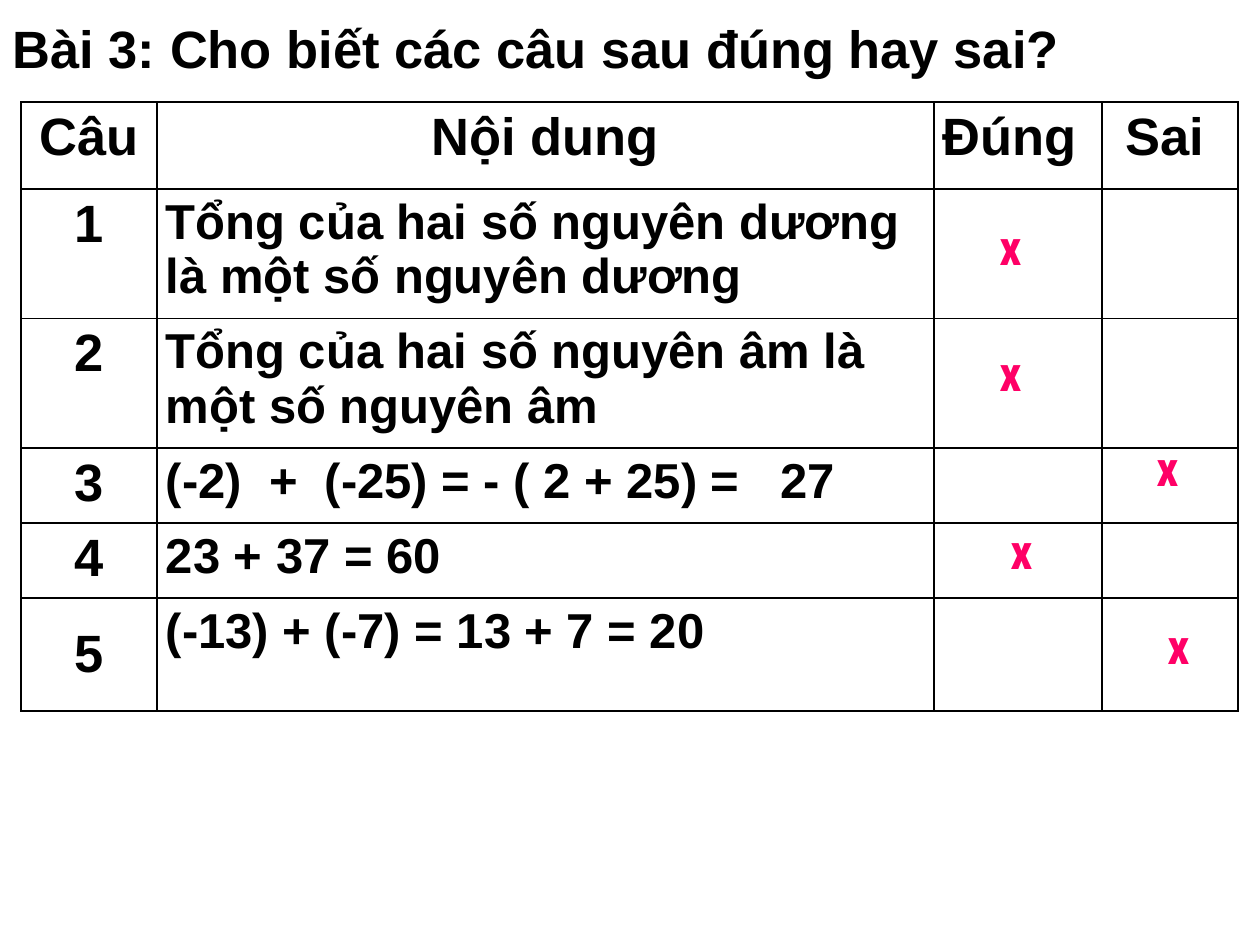
from lxml import etree
from pptx import Presentation
from pptx.dml.color import RGBColor
from pptx.enum.text import MSO_ANCHOR, MSO_AUTO_SIZE, PP_ALIGN
from pptx.oxml.ns import qn
from pptx.util import Pt

LEFT, MID = PP_ALIGN.LEFT, PP_ALIGN.CENTER
TOP, CENTER = MSO_ANCHOR.TOP, MSO_ANCHOR.MIDDLE
GROW = MSO_AUTO_SIZE.SHAPE_TO_FIT_TEXT
SCALE = 914400 / 126
COLORS = {"ink": "000000", "mark": "FF0066"}
COLS = [136, 777, 168, 136]
ROWS = [87, 126, 121, 74, 74, 113]
HEADS = ["Câu", "Nội dung", "Đúng", " Sai"]
ITEMS = [
    "Tổng của hai số nguyên dương là một số nguyên dương",
    "Tổng của hai số nguyên âm là một số nguyên âm",
    "(-2)  +  (-25) = - ( 2 + 25) =   27",
    "23 + 37 = 60",
    "(-13) + (-7) = 13 + 7 = 20",
]
MARKS = [(987, 210), (987, 336), (1144, 431), (998, 514), (1155, 609)]


def px(n):
    return round(n * SCALE)


class Sheet:
    """Holds the style and the slide being drawn."""

    def __init__(self, deck):
        self.font = "Arial"
        self.slide = deck.slides.add_slide(deck.slide_layouts[5])

    def label(self, frame, text, size, align=LEFT, color="ink", face=None):
        frame.text = text
        par = frame.paragraphs[0]
        par.alignment = align
        font = par.font
        font.name, font.size, font.bold = face or self.font, Pt(size), True
        font.color.rgb = RGBColor.from_string(COLORS[color])

    def title(self, text, x, y, w, h):
        box = self.slide.shapes.title
        box.left, box.top, box.width, box.height = map(px, (x, y, w, h))
        frame = box.text_frame
        frame.vertical_anchor, frame.auto_size = TOP, GROW
        self.label(frame, text, 30)

    def mark(self, x, y):
        box = self.slide.shapes.add_textbox(px(x), px(y), px(48), px(72))
        frame = box.text_frame
        frame.word_wrap, frame.auto_size = False, GROW
        self.label(frame, "x", 28, color="mark", face="Roboto Condensed")

    def border(self, cell):
        props = cell._tc.get_or_add_tcPr()
        for spot, side in enumerate(("lnL", "lnR", "lnT", "lnB")):
            line = etree.Element(qn(f"a:{side}"), w=str(Pt(1)))
            fill = etree.SubElement(line, qn("a:solidFill"))
            etree.SubElement(fill, qn("a:srgbClr"), val=COLORS["ink"])
            props.insert(spot, line)

    def table(self, x, y):
        grid = self.slide.shapes.add_table(
            len(ROWS), len(COLS), px(x), px(y), px(sum(COLS)), px(sum(ROWS))
        ).table
        grid.first_row = grid.horz_banding = False
        for col, size in zip(grid.columns, COLS):
            col.width = px(size)
        for row, size in zip(grid.rows, ROWS):
            row.height = px(size)
        for cell in grid.iter_cells():
            cell.margin_left = cell.margin_right = px(9)
            cell.margin_top = cell.margin_bottom = px(6)
            cell.fill.background()
            self.border(cell)
        for col, text in enumerate(HEADS):
            align = MID if col < 2 else LEFT
            self.label(grid.cell(0, col).text_frame, text, 30, align)
        for row, text in enumerate(ITEMS, 1):
            self.label(grid.cell(row, 0).text_frame, str(row), 30, MID)
            self.label(grid.cell(row, 1).text_frame, text, 28)
        grid.cell(len(ITEMS), 0).vertical_anchor = CENTER


def main():
    deck = Presentation()
    deck.slide_width, deck.slide_height = px(1260), px(945)
    sheet = Sheet(deck)
    sheet.title("Bài 3: Cho biết các câu sau đúng hay sai?", 0, 10, 1229, 77)
    sheet.table(21, 102)
    for spot in MARKS:
        sheet.mark(*spot)
    deck.save("out.pptx")


if __name__ == "__main__":
    main()
